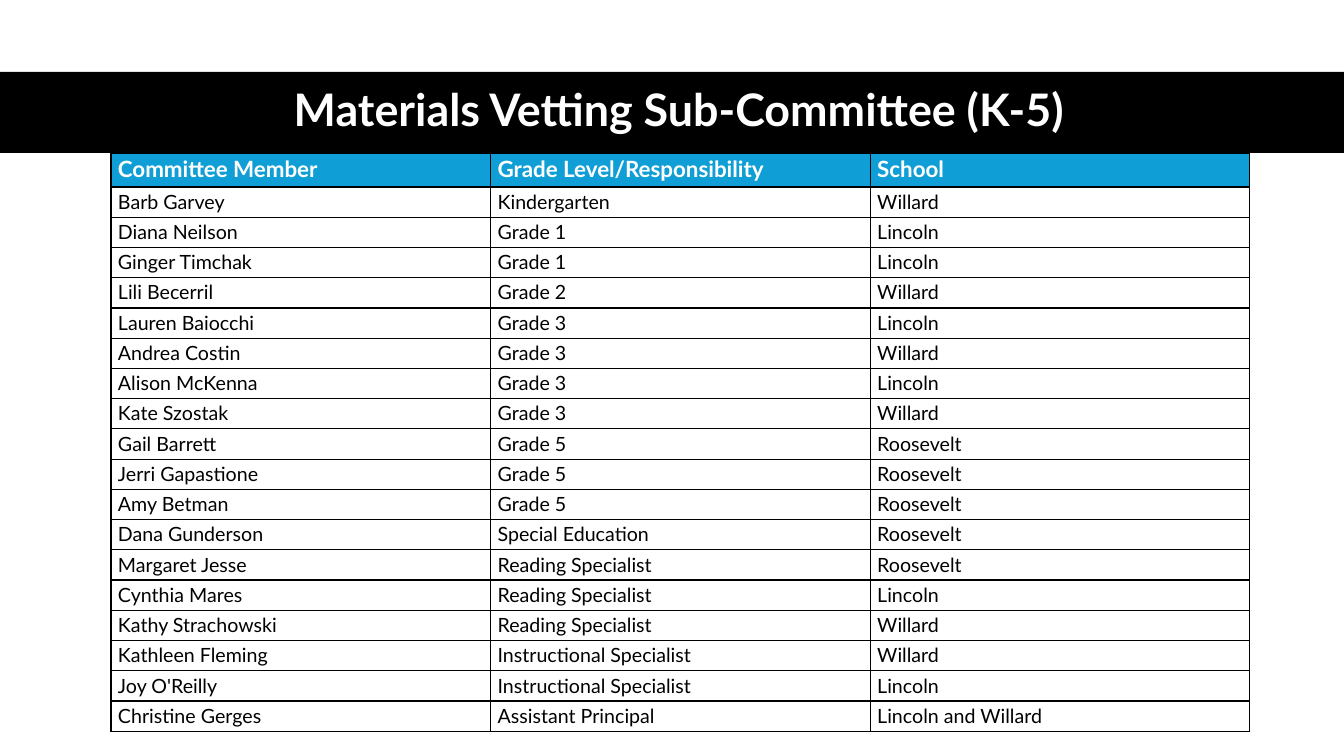
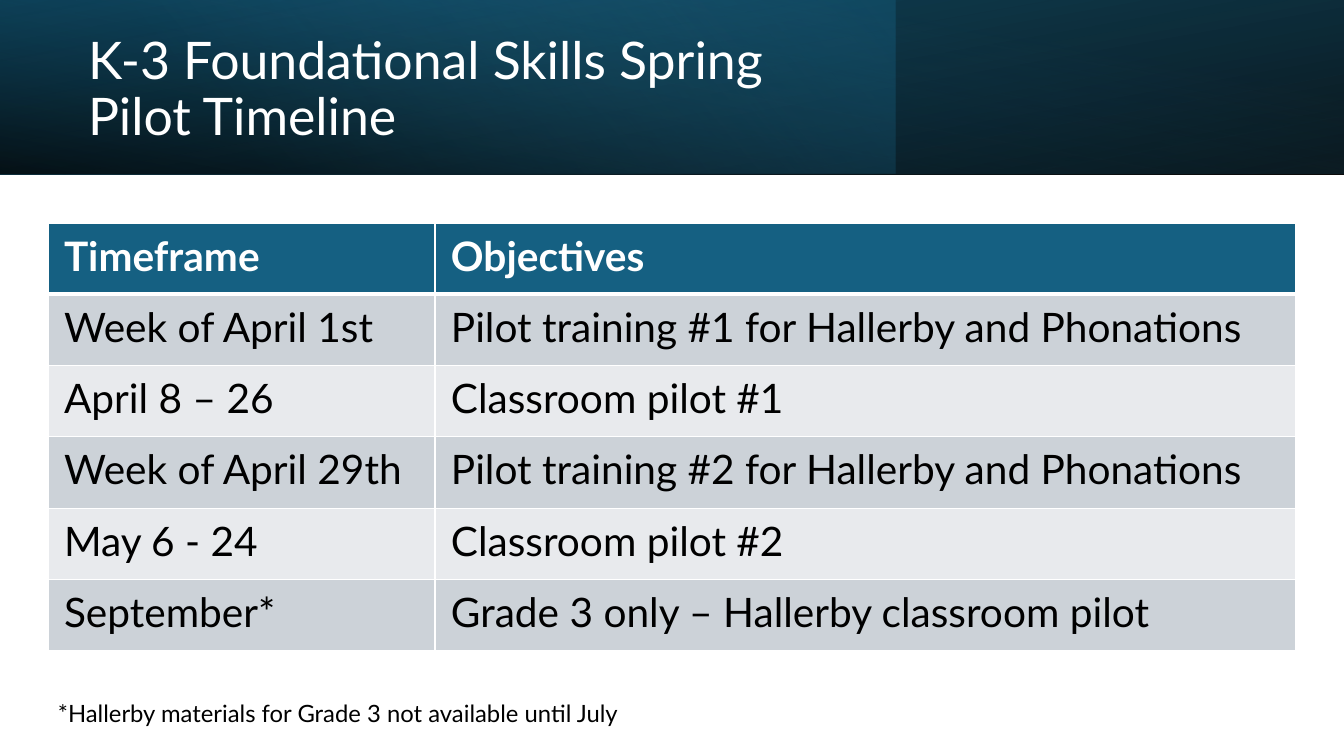
from dataclasses import dataclass

from lxml import etree
from pptx import Presentation
from pptx import util as u
from pptx.dml.color import RGBColor
from pptx.enum import shapes, text
from pptx.oxml import ns

SCALE = 914400 / 100.8  # EMU per px
SLIDE_W, SLIDE_H = 1344, 756


@dataclass(frozen=True)
class Theme:
    font: str = "Lato"
    white: str = "FFFFFF"
    black: str = "000000"
    sky: str = "0F9ED5"
    teal: str = "156082"
    deep_teal: str = "104862"
    light_blue: str = "46B1E1"
    stripes: tuple = ("CCD2D8", "E8EAED")
    committee_title: int = 32
    committee_head: int = 16
    committee_body: int = 14
    timeline_title: int = 37
    timeline_cell: int = 29
    footnote: int = 17


T = Theme()


@dataclass(frozen=True)
class TableStyle:
    head_fill: str
    body_fills: tuple
    border: str
    head_size: int
    body_size: int
    head_height: int
    pad_x: int
    pad_y: int
    head_rule: int = 1


COMMITTEE_STYLE = TableStyle(T.sky, (T.white,), T.black, T.committee_head,
                             T.committee_body, 34, 7, 3)
TIMELINE_STYLE = TableStyle(T.teal, T.stripes, T.white, T.timeline_cell,
                            T.timeline_cell, 71, 16, 8, head_rule=3)

COMMITTEE = [
    ("Committee Member", "Grade Level/Responsibility", "School"),
    ("Barb Garvey", "Kindergarten", "Willard"),
    ("Diana Neilson", "Grade 1", "Lincoln"),
    ("Ginger Timchak", "Grade 1", "Lincoln"),
    ("Lili Becerril", "Grade 2", "Willard"),
    ("Lauren Baiocchi", "Grade 3", "Lincoln"),
    ("Andrea Costin", "Grade 3", "Willard"),
    ("Alison McKenna", "Grade 3", "Lincoln"),
    ("Kate Szostak", "Grade 3", "Willard"),
    ("Gail Barrett", "Grade 5", "Roosevelt"),
    ("Jerri Gapastione", "Grade 5", "Roosevelt"),
    ("Amy Betman", "Grade 5", "Roosevelt"),
    ("Dana Gunderson", "Special Education", "Roosevelt"),
    ("Margaret Jesse", "Reading Specialist", "Roosevelt"),
    ("Cynthia Mares", "Reading Specialist", "Lincoln"),
    ("Kathy Strachowski", "Reading Specialist", "Willard"),
    ("Kathleen Fleming", "Instructional Specialist", "Willard"),
    ("Joy O'Reilly", "Instructional Specialist", "Lincoln"),
    ("Christine Gerges", "Assistant Principal", "Lincoln and Willard"),
]

TIMELINE = [
    ("Timeframe", "Objectives"),
    ("Week of April 1st", "Pilot training #1 for Hallerby and Phonations"),
    ("April 8 – 26", "Classroom pilot #1"),
    ("Week of April 29th", "Pilot training #2 for Hallerby and Phonations"),
    ("May 6 - 24", "Classroom pilot #2"),
    ("September*", "Grade 3 only – Hallerby classroom pilot"),
]


def px(n):
    return u.Emu(round(n * SCALE))


def rgb(color):
    return RGBColor.from_string(color)


def add_run(p, words, size, color, bold=False):
    r = p.add_run()
    r.text = words
    r.font.name, r.font.size, r.font.bold = T.font, u.Pt(size), bold
    r.font.color.rgb = rgb(color)


def write_line(sp, words, size, color, align=text.PP_ALIGN.LEFT, bold=False,
               before=0, after=0):
    """Fill a text shape with one vertically centred paragraph."""
    tf = sp.text_frame
    tf.word_wrap, tf.auto_size = True, text.MSO_AUTO_SIZE.NONE
    tf.vertical_anchor = text.MSO_ANCHOR.MIDDLE
    p = tf.paragraphs[0]
    p.alignment, p.line_spacing = align, 0.9
    p.space_before, p.space_after = u.Pt(before), u.Pt(after)
    add_run(p, words, size, color, bold)


def place_title(s, box, words, size, **style):
    sp = s.shapes.title
    sp.left, sp.top, sp.width, sp.height = map(px, box)
    write_line(sp, words, size, T.white, after=6, **style)


def add_band(s, box):
    """Add an unlined rectangle just behind the title."""
    sp = s.shapes.add_shape(shapes.MSO_SHAPE.RECTANGLE, *map(px, box))
    sp.shadow.inherit = False
    sp.line.fill.background()
    s.shapes.title._element.addprevious(sp._element)
    return sp


def fade(sp, angle, stops):
    """Fill with two (position, colour, opacity) percent stops, angle clockwise."""
    sp.fill.gradient()
    sp.fill.gradient_angle = 360 - angle
    for stop, (position, color, opacity) in zip(sp.fill.gradient_stops, stops):
        stop.position = position / 100
        stop.color.rgb = rgb(color)
    colors = sp._element.iter(ns.qn("a:srgbClr"))
    for clr, (_, _, opacity) in zip(colors, stops):
        etree.SubElement(clr, ns.qn("a:alpha"), val=str(opacity * 1000))


def add_header(s, box):
    """Layer three fades; the middle one covers two thirds of the box."""
    x, y, w, h = box
    base = add_band(s, box)
    base.rotation = 180
    fade(base, 100, [(0, T.black, 96), (100, T.deep_teal, 100)])
    glow = add_band(s, (x, y, w * 2 // 3, h))
    fade(glow, 140, [(0, T.teal, 41), (74, T.light_blue, 0)])
    shade = add_band(s, box)
    fade(shade, 260, [(0, T.black, 63), (78, T.teal, 15)])
    for sp in (base, shade):
        sp._element.spPr.find(ns.qn("a:xfrm")).set("flipH", "1")


def set_borders(cell, color, top, bottom):
    tc_pr = cell._tc.get_or_add_tcPr()
    widths = {"a:lnL": 1, "a:lnR": 1, "a:lnT": top, "a:lnB": bottom}
    for i, (tag, width) in enumerate(widths.items()):
        ln = etree.Element(ns.qn(tag), w=str(u.Pt(width)))
        fill = etree.SubElement(ln, ns.qn("a:solidFill"))
        etree.SubElement(fill, ns.qn("a:srgbClr"), val=color)
        tc_pr.insert(i, ln)


def add_grid(s, box, rows, shares, style):
    """Add a table whose column widths follow shares and whose body rows are equal."""
    x, y, w, h = box
    table = s.shapes.add_table(len(rows), len(shares), *map(px, box)).table
    table.first_row = table.horz_banding = False
    for column, share in zip(table.columns, shares):
        column.width = px(w * share / sum(shares))
    body_height = (h - style.head_height) / (len(rows) - 1)
    for i, row in enumerate(rows):
        head = i == 0
        table.rows[i].height = px(style.head_height if head else body_height)
        fill = style.head_fill if head else style.body_fills[(i - 1) % len(style.body_fills)]
        for j, words in enumerate(row):
            cell = table.cell(i, j)
            cell.margin_left = cell.margin_right = px(style.pad_x)
            cell.margin_top = cell.margin_bottom = px(style.pad_y)
            cell.fill.solid()
            cell.fill.fore_color.rgb = rgb(fill)
            set_borders(cell, style.border, style.head_rule if i == 1 else 1,
                        style.head_rule if head else 1)
            add_run(cell.text_frame.paragraphs[0], words,
                    style.head_size if head else style.body_size,
                    T.white if head else T.black, bold=head)


def add_footnote(s, box, words):
    sp = s.shapes.add_textbox(*map(px, box))
    write_line(sp, words, T.footnote, T.black, before=10)


def committee_slide(s):
    band = add_band(s, (0, 72, SLIDE_W, 81))
    band.fill.solid()
    band.fill.fore_color.rgb = rgb(T.black)
    place_title(s, (61, 71, 1236, 81), "Materials Vetting Sub-Committee (K-5)",
                T.committee_title, align=text.PP_ALIGN.CENTER, bold=True)
    add_grid(s, (111, 153, 1139, 579), COMMITTEE, (1, 1, 1), COMMITTEE_STYLE)


def timeline_slide(s):
    add_header(s, (0, 0, SLIDE_W, 174))
    place_title(s, (78, 27, 778, 128), "K-3 Foundational Skills Spring Pilot Timeline",
                T.timeline_title)
    add_footnote(s, (48, 690, 641, 50),
                 "*Hallerby materials for Grade 3 not available until July")
    add_grid(s, (48, 223, 1248, 428), TIMELINE, (387, 861), TIMELINE_STYLE)


def main():
    prs = Presentation()
    prs.slide_width, prs.slide_height = px(SLIDE_W), px(SLIDE_H)
    title_only = prs.slide_layouts[5]
    for build in (committee_slide, timeline_slide):
        build(prs.slides.add_slide(title_only))
    prs.save("out.pptx")


if __name__ == "__main__":
    main()
